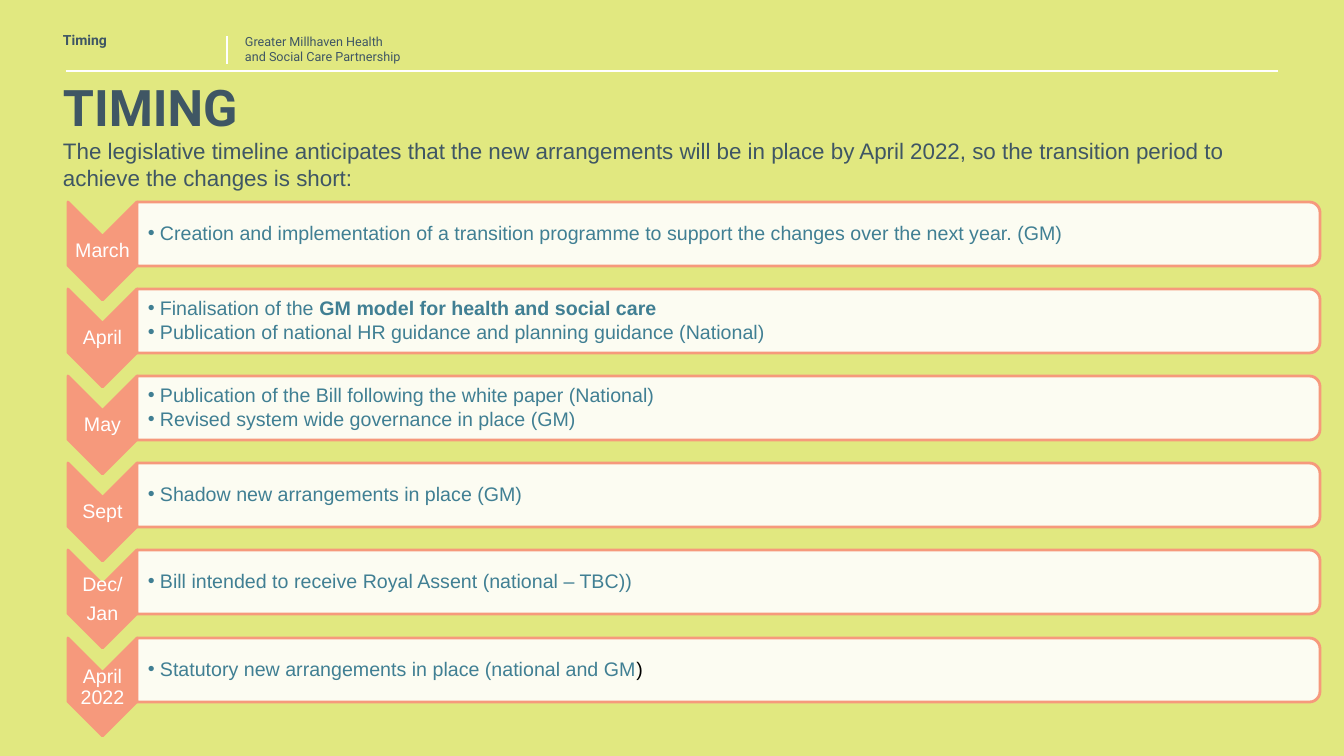
from dataclasses import dataclass

from lxml import etree
from pptx import Presentation
from pptx import util as u
from pptx.dml.color import RGBColor
from pptx.enum import shapes, text
from pptx.oxml import ns

EMU_PER_PX = 914400 / 100.8
LIME, SLATE, CORAL, TEAL, WHITE, BLACK = "E1E880", "3F5664", "F6997C", "407F93", "FFFFFF", "000000"
TIMELINE_LEFT, TIMELINE_TOP, TIMELINE_SPAN = 68, 202, 436
CHEVRON_WIDTH, CHEVRON_HEIGHT = 69, 98
PANEL_WIDTH, PANEL_HEIGHT = 1183, 64
TOP, MIDDLE = text.MSO_ANCHOR.TOP, text.MSO_ANCHOR.MIDDLE


@dataclass(frozen=True)
class Frame:
    left: int
    top: int
    width: int
    height: int


@dataclass(frozen=True)
class Span:
    words: str
    bold: bool = False
    color: str = ""


@dataclass(frozen=True)
class Style:
    size: int
    color: str
    font: str = "Arial"
    bold: bool = False
    anchor: text.MSO_ANCHOR = MIDDLE
    insets: tuple[int, int, int, int] = (10, 5, 10, 5)
    paragraph: tuple[tuple[str, object], ...] = ()
    bullet_indent: int = 0


@dataclass(frozen=True)
class Milestone:
    label: tuple[str, ...]
    actions: tuple[tuple[Span, ...], ...]


@dataclass(frozen=True)
class Rule:
    start: tuple[int, int]
    end: tuple[int, int]


PARTNERSHIP = Style(9, SLATE, "Roboto")
TITLE = Style(36, SLATE, "Roboto", True, paragraph=(("line_spacing", u.Pt(39.2)),))
SECTION = Style(10, SLATE, "Roboto", True, TOP, paragraph=(("line_spacing", 0.9), ("space_before", u.Pt(2))))
INTRO = Style(16, SLATE, anchor=TOP, paragraph=(("space_before", u.Pt(3.2)),))
LABEL = Style(
    14, WHITE, insets=(1, 1, 1, 1),
    paragraph=(("alignment", text.PP_ALIGN.CENTER), ("line_spacing", 0.9), ("space_after", u.Pt(5.6))),
)
ACTION = Style(
    14, TEAL, insets=(11, 1, 1, 1), bullet_indent=12,
    paragraph=(("level", 1), ("line_spacing", 0.9), ("space_after", u.Pt(2.4))),
)

RULES = [Rule((66, 71), (1278, 71)), Rule((227, 64), (227, 36))]

HEADINGS = [
    (Frame(235, 29, 352, 40), ("Greater Millhaven Health", "and Social Care Partnership"), PARTNERSHIP),
    (Frame(53, 46, 1210, 126), ("TIMING",), TITLE),
    (Frame(53, 28, 204, 38), ("Timing",), SECTION),
    (
        Frame(53, 132, 1223, 454),
        (
            "The legislative timeline anticipates that the new arrangements will be in place by April 2022, "
            "so the transition period to achieve the changes is short:",
        ),
        INTRO,
    ),
]

MILESTONES = [
    Milestone(("March",), (
        (Span("Creation and implementation of a transition programme to support the changes "
              "over the next year. (GM)"),),
    )),
    Milestone(("April",), (
        (Span("Finalisation of the "), Span("GM model for health and social care", bold=True)),
        (Span("Publication of national HR guidance and planning guidance (National)"),),
    )),
    Milestone(("May",), (
        (Span("Publication of the Bill following the white paper (National)"),),
        (Span("Revised system wide governance in place (GM)"),),
    )),
    Milestone(("Sept",), ((Span("Shadow new arrangements in place (GM)"),),)),
    Milestone(("Dec/", "Jan"), ((Span("Bill intended to receive Royal Assent (national – TBC))"),),)),
    Milestone(("April 2022",), (
        (Span("Statutory new arrangements in place (national and GM"), Span(")", color=BLACK)),
    )),
]


def px(length: float) -> int:
    return round(length * EMU_PER_PX)


def paint(target, color: str) -> None:
    if hasattr(target, "solid"):
        target.solid()
        target = target.fore_color
    target.rgb = RGBColor.from_string(color)


def apply(target, values: dict) -> None:
    for name, value in values.items():
        setattr(target, name, value)


def plain(*lines: str) -> tuple[tuple[Span, ...], ...]:
    return tuple((Span(line),) for line in lines)


def add_text(page, frame: Frame, paragraphs: tuple[tuple[Span, ...], ...], style: Style) -> None:
    box = page.shapes.add_textbox(px(frame.left), px(frame.top), px(frame.width), px(frame.height))
    left, top, right, bottom = map(px, style.insets)
    apply(box.text_frame, {
        "word_wrap": True, "vertical_anchor": style.anchor,
        "margin_left": left, "margin_top": top, "margin_right": right, "margin_bottom": bottom,
    })
    for index, spans in enumerate(paragraphs):
        para = box.text_frame.add_paragraph() if index else box.text_frame.paragraphs[0]
        apply(para, dict(style.paragraph))
        if style.bullet_indent:
            properties = para._p.get_or_add_pPr()
            properties.set("marL", str(px(style.bullet_indent)))
            properties.set("indent", str(-px(style.bullet_indent)))
            etree.SubElement(properties, ns.qn("a:buFont"), typeface=style.font)
            etree.SubElement(properties, ns.qn("a:buChar"), char="•")
        for span in spans:
            run = para.add_run()
            run.text = span.words
            apply(run.font, {"size": u.Pt(style.size), "name": style.font, "bold": style.bold or span.bold})
            paint(run.font.fill, span.color or style.color)


def add_turned_shape(page, kind: shapes.MSO_SHAPE, frame: Frame, fill: str, opacity: int = 100) -> None:
    shift = (frame.width - frame.height) / 2
    shape = page.shapes.add_shape(
        kind, px(frame.left + shift), px(frame.top - shift), px(frame.height), px(frame.width)
    )
    shape.rotation = 90
    shape.shadow.inherit = False
    paint(shape.fill, fill)
    paint(shape.line.fill, CORAL)
    shape.line.width = u.Pt(2)
    if opacity < 100:
        color = shape._element.spPr.find(ns.qn("a:solidFill"))[0]
        etree.SubElement(color, ns.qn("a:alpha"), val=str(opacity * 1000))


def add_rule(page, rule: Rule) -> None:
    line = page.shapes.add_connector(shapes.MSO_CONNECTOR.STRAIGHT, *map(px, rule.start + rule.end))
    paint(line.line.fill, WHITE)
    line.line.width = u.Pt(1)
    etree.SubElement(line._element.spPr, ns.qn("a:effectLst"))


def add_milestone(page, milestone: Milestone, top: int) -> None:
    chevron = Frame(TIMELINE_LEFT, top, CHEVRON_WIDTH, CHEVRON_HEIGHT)
    panel_left = TIMELINE_LEFT + CHEVRON_WIDTH
    panel = Frame(panel_left, top, PANEL_WIDTH, PANEL_HEIGHT)
    add_turned_shape(page, shapes.MSO_SHAPE.CHEVRON, chevron, CORAL)
    add_text(page, Frame(TIMELINE_LEFT, top + 35, CHEVRON_WIDTH, 29), plain(*milestone.label), LABEL)
    add_turned_shape(page, shapes.MSO_SHAPE.ROUND_2_SAME_RECTANGLE, panel, WHITE, 90)
    add_text(page, Frame(panel_left, top + 3, PANEL_WIDTH - 3, 58), milestone.actions, ACTION)


def main() -> None:
    deck = Presentation()
    apply(deck, {"slide_width": px(1344), "slide_height": px(756)})
    page = deck.slides.add_slide(deck.slide_layouts[6])
    paint(page.background.fill, LIME)
    for rule in RULES:
        add_rule(page, rule)
    for frame, lines, style in HEADINGS:
        add_text(page, frame, plain(*lines), style)
    for index, milestone in enumerate(MILESTONES):
        add_milestone(page, milestone, TIMELINE_TOP + index * TIMELINE_SPAN // (len(MILESTONES) - 1))
    deck.save("out.pptx")


if __name__ == "__main__":
    main()
